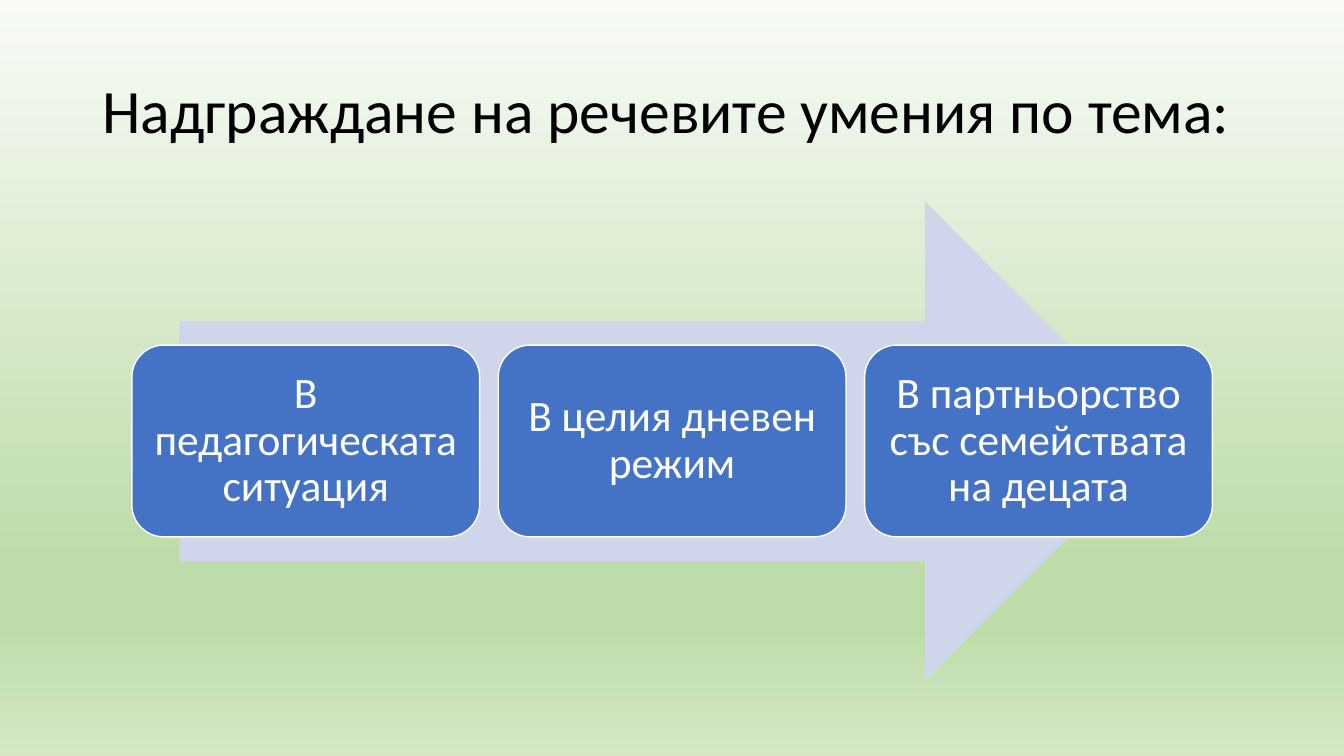
from copy import deepcopy

from pptx import Presentation
from pptx.dml.color import RGBColor
from pptx.enum.shapes import MSO_SHAPE
from pptx.enum.text import MSO_ANCHOR, PP_ALIGN
from pptx.util import Pt

BLACK = RGBColor(0x00, 0x00, 0x00)
WHITE = RGBColor(0xFF, 0xFF, 0xFF)
BLUE = RGBColor(0x44, 0x72, 0xC4)
PALE_BLUE = RGBColor(0xCF, 0xD5, 0xEA)
GREEN_STOPS = [
    (0, RGBColor(0xF8, 0xFB, 0xF6)),
    (0.74, RGBColor(0xBE, 0xDC, 0xAA)),
    (0.83, RGBColor(0xBE, 0xDC, 0xAA)),
    (1, RGBColor(0xD4, 0xE8, 0xC6)),
]
FONT = "Calibri"
STEPS = [
    "В педагогическата ситуация",
    "В целия дневен режим",
    "В партньорство със семействата на децата",
]


def add_text(frame, text, size, color, align):
    frame.word_wrap = True
    frame.vertical_anchor = MSO_ANCHOR.MIDDLE
    para = frame.paragraphs[0]
    para.alignment = align
    para.line_spacing = 0.9
    span = para.add_run()
    span.text = text
    span.font.name = FONT
    span.font.size = Pt(size)
    span.font.color.rgb = color


deck = Presentation()
deck.slide_width, deck.slide_height = Pt(960), Pt(540)
page = deck.slides.add_slide(deck.slide_layouts[5])

# Background: green gradient from top to bottom
fill = page.background.fill
fill.gradient()
fill.gradient_angle = 270
stop_list = page.element.xpath(".//a:gsLst")[0]
while len(stop_list) < len(GREEN_STOPS):
    stop_list.append(deepcopy(stop_list[0]))
for stop, (position, color) in zip(fill.gradient_stops, GREEN_STOPS):
    stop.position = position
    stop.color.rgb = color

# Title
title = page.shapes.title
title.left, title.top, title.width, title.height = Pt(66), Pt(28.75), Pt(828), Pt(104.4)
add_text(title.text_frame, "Надграждане на речевите умения по тема:", 44, BLACK, PP_ALIGN.LEFT)

# Arrow behind the steps
arrow = page.shapes.add_shape(MSO_SHAPE.RIGHT_ARROW, Pt(128.1), Pt(143.8), Pt(703.8), Pt(342.6))
arrow.shadow.inherit = False
arrow.fill.solid()
arrow.fill.fore_color.rgb = PALE_BLUE
arrow.line.fill.background()

# Three steps, evenly spaced
for index, step in enumerate(STEPS):
    box = page.shapes.add_shape(
        MSO_SHAPE.ROUNDED_RECTANGLE, Pt(94.2 + index * 261.7), Pt(246.5), Pt(248.4), Pt(137)
    )
    box.shadow.inherit = False
    box.fill.solid()
    box.fill.fore_color.rgb = BLUE
    box.line.color.rgb = WHITE
    box.line.width = Pt(1)
    frame = box.text_frame
    frame.margin_left = frame.margin_right = frame.margin_top = frame.margin_bottom = Pt(9)
    add_text(frame, step, 31, WHITE, PP_ALIGN.CENTER)

deck.save("out.pptx")
